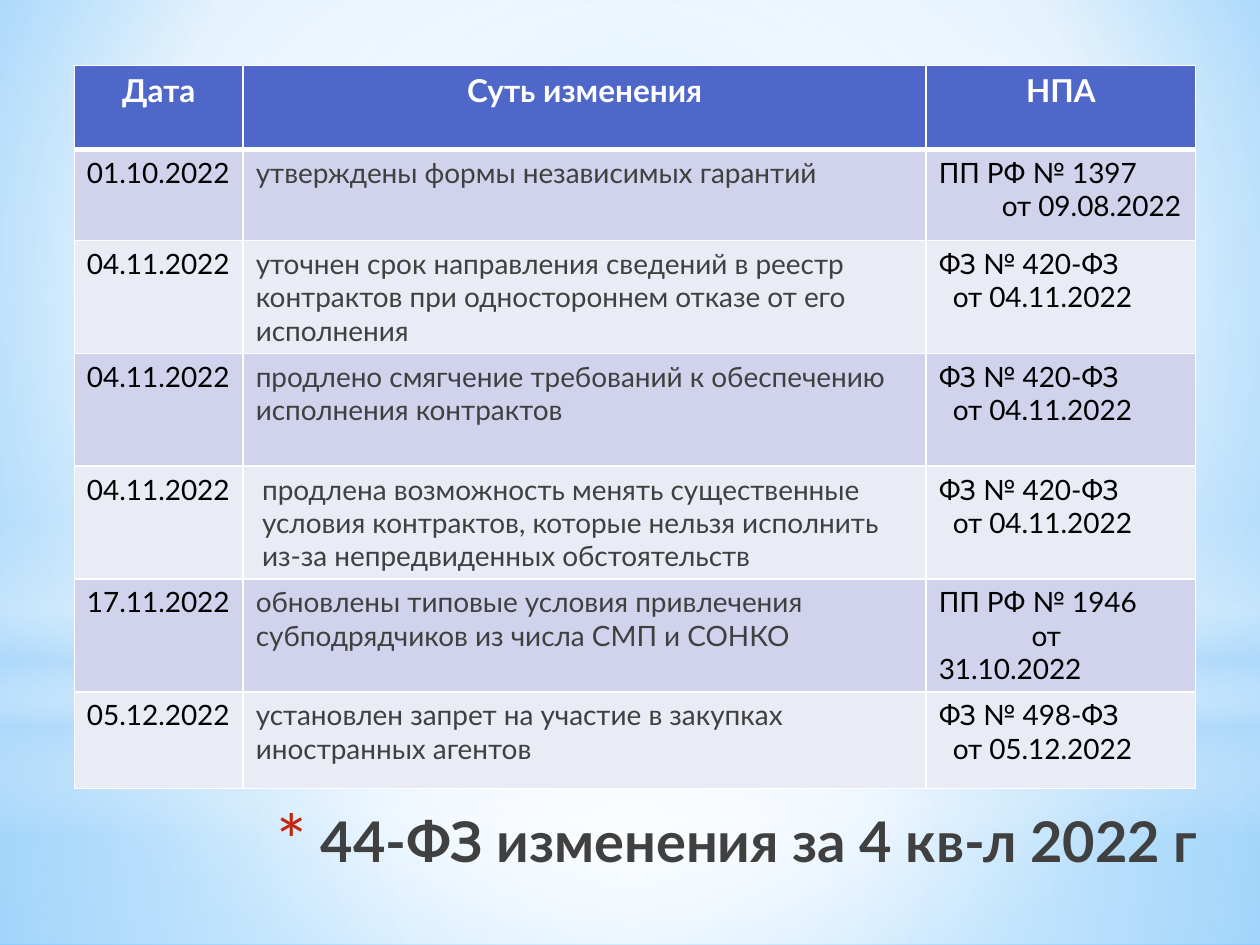
from dataclasses import dataclass

from lxml import etree
from pptx import Presentation
from pptx.dml.color import RGBColor
from pptx.enum.shapes import MSO_SHAPE
from pptx.enum.text import MSO_ANCHOR, MSO_AUTO_SIZE, PP_ALIGN
from pptx.oxml import parse_xml
from pptx.oxml.ns import nsdecls, qn
from pptx.util import Pt

RECT, OVAL = MSO_SHAPE.RECTANGLE, MSO_SHAPE.OVAL
LEFT, MID, RIGHT = PP_ALIGN.LEFT, PP_ALIGN.CENTER, PP_ALIGN.RIGHT
TOP, FIXED = MSO_ANCHOR.TOP, MSO_AUTO_SIZE.NONE


@dataclass(frozen=True)
class Theme:
    font: str = "Lato"
    white: str = "FFFFFF"
    black: str = "000000"
    grey: str = "404040"
    red: str = "C3260C"
    sky: str = "B4DCFA"
    head: str = "4E67C8"
    bands: tuple = ("D0D3EB", "E9EBF5")
    title: int = 32
    label: int = 18
    body: int = 16


@dataclass(frozen=True)
class Glow:
    form: int
    top: float
    high: float
    stops: tuple
    focus: tuple | None = (50, 50, 50, 50)


@dataclass(frozen=True)
class Entry:
    date: str
    gist: str
    act: str
    day: str
    shift: float = 8
    inset: float = 0


@dataclass(frozen=True)
class Line:
    text: str
    color: str
    size: int = 16
    bold: bool = False
    align: int = LEFT
    inset: float = 0
    shift: float = 0


T = Theme()
WIDE, HIGH = 720, 540
COLS = (96.5, 390.3, 154)
ROWS = (48, 52, 64.5, 64.5, 64.5, 64.5, 55)
HEADS = ("Дата", "Суть изменения", "НПА")
BACK = ((0, "9ED5FF", 100), (60, T.white, 100), (100, "5BB9FF", 100))
GLOWS = (
    Glow(RECT, 402, 138, ((0, T.white, 91), (37, T.white, 76), (100, T.sky, 79))),
    Glow(RECT, 0, 402, ((0, T.white, 89), (48, T.white, 62), (100, T.sky, 79))),
    Glow(RECT, 297, 180, ((0, T.white, 0), (29, T.white, 30), (45, T.sky, 40),
                          (55, T.white, 26), (65, T.sky, 60), (100, T.white, 0)), None),
    Glow(OVAL, 126, 402, ((0, T.white, 100), (56, T.white, 0))),
)
ITEMS = (
    Entry("01.10.2022", "утверждены формы независимых гарантий",
          "ПП РФ № 1397", "от 09.08.2022", 36),
    Entry("04.11.2022", "уточнен срок направления сведений в реестр контрактов "
          "при одностороннем отказе от его исполнения",
          "ФЗ № 420-ФЗ", "от 04.11.2022"),
    Entry("04.11.2022", "продлено смягчение требований к обеспечению "
          "исполнения контрактов", "ФЗ № 420-ФЗ", "от 04.11.2022"),
    Entry("04.11.2022", "продлена возможность менять существенные условия "
          "контрактов, которые нельзя исполнить из-за непредвиденных обстоятельств",
          "ФЗ № 420-ФЗ", "от 04.11.2022", inset=3.6),
    Entry("17.11.2022", "обновлены типовые условия привлечения субподрядчиков "
          "из числа СМП и СОНКО", "ПП РФ № 1946", "от 31.10.2022", 53),
    Entry("05.12.2022", "установлен запрет на участие в закупках иностранных агентов",
          "ФЗ № 498-ФЗ", "от 05.12.2022"),
)


def blend(host, stops: tuple, focus: tuple | None) -> None:
    marks = "".join(
        f'<a:gs pos="{pos * 1000}"><a:srgbClr val="{tint}">'
        f'<a:alpha val="{alpha * 1000}"/></a:srgbClr></a:gs>'
        for pos, tint, alpha in stops)
    if focus:
        sides = " ".join(f'{side}="{part * 1000}"' for side, part in zip("ltrb", focus))
        shade = f'<a:path path="circle"><a:fillToRect {sides}/></a:path>'
    else:
        shade = '<a:lin ang="5400000" scaled="0"/>'
    old = host.find(qn("a:solidFill"))
    host.replace(old, parse_xml(
        f'<a:gradFill {nsdecls("a")} rotWithShape="1">'
        f'<a:gsLst>{marks}</a:gsLst>{shade}</a:gradFill>'))


def draw_glow(slide, glow: Glow) -> None:
    shape = slide.shapes.add_shape(glow.form, Pt(0), Pt(glow.top), Pt(WIDE), Pt(glow.high))
    shape.shadow.inherit = False
    shape.line.fill.background()
    shape.fill.solid()
    blend(shape.element.spPr, glow.stops, glow.focus)


def write(para, line: Line) -> None:
    para.alignment = line.align
    props = para._p.get_or_add_pPr()
    props.set("marL", str(Pt(line.inset)))
    props.set("indent", str(Pt(line.shift)))
    run = para.add_run()
    run.text = line.text
    font = run.font
    font.name, font.size, font.bold = T.font, Pt(line.size), line.bold
    font.color.rgb = RGBColor.from_string(line.color)


def edge(cell, base: float) -> None:
    props = cell._tc.get_or_add_tcPr()
    for spot, (side, width) in enumerate((("L", 1), ("R", 1), ("T", 1), ("B", base))):
        props.insert(spot, parse_xml(
            f'<a:ln{side} {nsdecls("a")} w="{Pt(width)}"><a:solidFill>'
            f'<a:srgbClr val="{T.white}"/></a:solidFill></a:ln{side}>'))


def fill_cell(cell, color: str, lines: tuple, base: float = 1) -> None:
    cell.fill.solid()
    cell.fill.fore_color.rgb = RGBColor.from_string(color)
    edge(cell, base)
    frame = cell.text_frame
    for spot, line in enumerate(lines):
        write(frame.add_paragraph() if spot else frame.paragraphs[0], line)


def draw_table(slide) -> None:
    table = slide.shapes.add_table(
        len(ROWS), len(COLS), Pt(42.5), Pt(37.4), Pt(sum(COLS)), Pt(sum(ROWS))).table
    for col, width in zip(table.columns, COLS):
        col.width = Pt(width)
    for row, height in zip(table.rows, ROWS):
        row.height = Pt(height)
    for col, text in enumerate(HEADS):
        fill_cell(table.cell(0, col), T.head,
                  (Line(text, T.white, T.label, True, MID),), 3)
    for row, item in enumerate(ITEMS, 1):
        parts = (
            (Line(item.date, T.black, T.body),),
            (Line(item.gist, T.grey, T.body, inset=item.inset),),
            (Line(item.act, T.black, T.body),
             Line(item.day, T.black, T.body, shift=item.shift)),
        )
        for col, lines in enumerate(parts):
            fill_cell(table.cell(row, col), T.bands[(row - 1) % 2], lines)


def draw_title(slide) -> None:
    title = slide.shapes.title
    title.left, title.top, title.width, title.height = Pt(70.5), Pt(457), Pt(621.5), Pt(57)
    frame = title.text_frame
    frame.auto_size, frame.vertical_anchor, frame.word_wrap = FIXED, TOP, True
    para = frame.paragraphs[0]
    write(para, Line("44-ФЗ изменения за 4 кв-л 2022 г", T.grey, T.title, True,
                     RIGHT, 25.2, -25.2))
    props = para._p.get_or_add_pPr()
    tint = etree.SubElement(props, qn("a:buClr"))
    etree.SubElement(tint, qn("a:srgbClr"), val=T.red)
    etree.SubElement(props, qn("a:buSzPct"), val="128000")
    etree.SubElement(props, qn("a:buFont"), typeface=T.font)
    etree.SubElement(props, qn("a:buChar"), char="*")
    title.element.getparent().append(title.element)


def main() -> None:
    deck = Presentation()
    deck.slide_width, deck.slide_height = Pt(WIDE), Pt(HIGH)
    slide = deck.slides.add_slide(deck.slide_layouts[5])
    slide.background.fill.solid()
    blend(slide.element.find(".//" + qn("p:bgPr")), BACK, (20, 10, 20, 60))
    for glow in GLOWS:
        draw_glow(slide, glow)
    draw_title(slide)
    draw_table(slide)
    deck.save("out.pptx")


if __name__ == "__main__":
    main()
